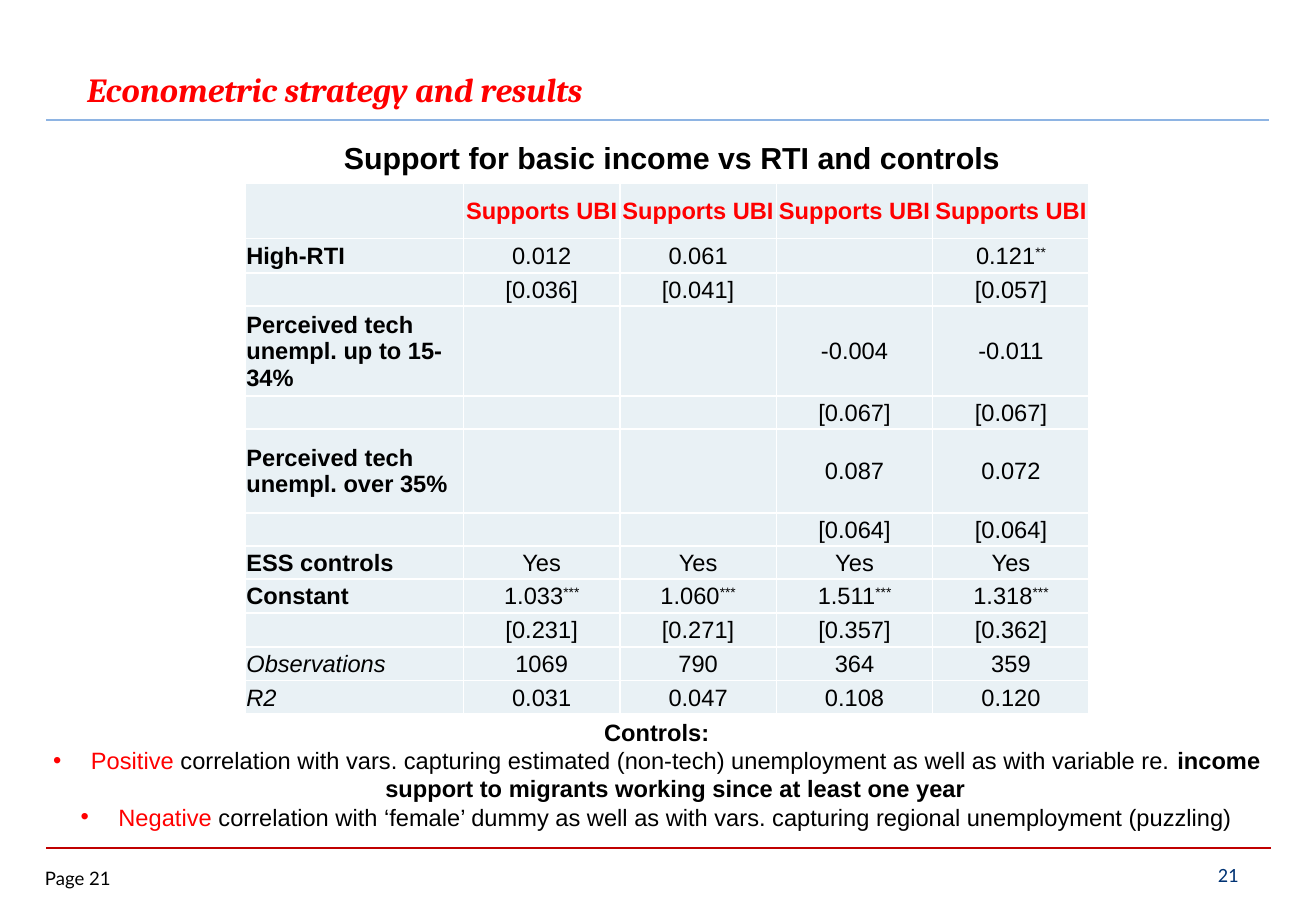
import pptx
import pptx.util
import pptx.dml.color
import pptx.enum.shapes
import pptx.enum.text
import pptx.oxml
import pptx.oxml.ns
from lxml import etree

Cm, Pt = pptx.util.Cm, pptx.util.Pt
ALIGN = pptx.enum.text.PP_ALIGN
MIDDLE = pptx.enum.text.MSO_ANCHOR.MIDDLE
qn = pptx.oxml.ns.qn

# Content
BLACK, RED, WHITE, CELL = "000000", "FF0000", "FFFFFF", "E9F1F5"
BODY = dict(name="Arial", size=14, color=BLACK)
BOLD = dict(BODY, bold=True)
REDDISH = dict(BODY, color=RED)
TITLE = dict(name="Cambria", size=20, color=RED, bold=True, italic=True)

# start x, end x, y, colour, width
RULES = [(0.97, 26.57, 17.73, "C00000", 1), (0.97, 26.52, 2.51, "8EB4E3", 1.5)]

# left, top, width, height, inset, alignment, text, format
LABELS = [
    (0.94, 18.14, 1.85, 0.56, False, ALIGN.LEFT, "Page 21",
     dict(name="Lato", size=11, color=BLACK)),
    (1.57, 1.32, 19.58, 1.12, True, ALIGN.LEFT, "Econometric strategy and results", TITLE),
    (19.71, 17.91, 6.43, 1.02, True, ALIGN.RIGHT, "21",
     dict(name="Calibri", size=12, color="003374")),
    (1.96, 2.79, 24.18, 1.02, True, ALIGN.CENTER,
     "Support for basic income vs RTI and controls", dict(BOLD, size=18)),
]

NOTES = [
    [("Controls:", BOLD)],
    [("Positive", REDDISH),
     (" correlation with vars. capturing estimated (non-tech) unemployment"
      " as well as with variable re.", BODY),
     (" income support to migrants working since at least one year", BOLD)],
    [("Negative", REDDISH),
     (" correlation with ‘female’ dummy as well as with vars."
      " capturing regional unemployment (puzzling)", BODY)],
]

# row height, cells
RESULTS = [
    (1.15, ["", "Supports UBI", "Supports UBI", "Supports UBI", "Supports UBI"]),
    (0.72, ["High-RTI", "0.012", "0.061", "", "0.121**"]),
    (0.69, ["", "[0.036]", "[0.041]", "", "[0.057]"]),
    (1.88, ["Perceived tech unempl. up to 15-34%", "", "", "-0.004", "-0.011"]),
    (0.69, ["", "", "", "[0.067]", "[0.067]"]),
    (1.76, ["Perceived tech unempl. over 35%", "", "", "0.087", "0.072"]),
    (0.69, ["", "", "", "[0.064]", "[0.064]"]),
    (0.69, ["ESS controls", "Yes", "Yes", "Yes", "Yes"]),
    (0.71, ["Constant", "1.033***", "1.060***", "1.511***", "1.318***"]),
    (0.71, ["", "[0.231]", "[0.271]", "[0.357]", "[0.362]"]),
    (0.71, ["Observations", "1069", "790", "364", "359"]),
    (0.70, ["R2", "0.031", "0.047", "0.108", "0.120"]),
]
COLUMNS = [4.56] + [3.27] * 4
ITALIC_ROWS = ("Observations", "R2")


# Helpers
def rgb(value):
    return pptx.dml.color.RGBColor.from_string(value)


def add_run(p, text, fmt):
    r = p.add_run()
    r.text = text
    for key, value in fmt.items():
        if key == "color":
            r.font.color.rgb = rgb(value)
        else:
            setattr(r.font, key, Pt(value) if key == "size" else value)
    return r


def add_box(s, left, top, width, height, inset=True):
    tf = s.shapes.add_textbox(Cm(left), Cm(top), Cm(width), Cm(height)).text_frame
    tf.word_wrap = True
    if not inset:
        tf.margin_left = tf.margin_right = tf.margin_top = tf.margin_bottom = 0
    return tf


def add_bullet(p, color):
    pPr = p._p.get_or_add_pPr()
    pPr.set("marL", str(Cm(0.79)))
    pPr.set("indent", str(-Cm(0.79)))
    clr = etree.SubElement(pPr, qn("a:buClr"))
    etree.SubElement(clr, qn("a:srgbClr"), val=color)
    etree.SubElement(pPr, qn("a:buFont"), typeface="Arial")
    etree.SubElement(pPr, qn("a:buChar"), char="•")


def style_cell(cell):
    cell.vertical_anchor = MIDDLE
    cell.margin_left = cell.margin_right = cell.margin_top = Cm(0.02)
    cell.margin_bottom = 0
    tcPr = cell._tc.get_or_add_tcPr()
    for side in ("a:lnL", "a:lnR", "a:lnT", "a:lnB"):
        ln = etree.SubElement(tcPr, qn(side), w=str(Pt(1)))
        fill = etree.SubElement(ln, qn("a:solidFill"))
        etree.SubElement(fill, qn("a:srgbClr"), val=WHITE)
    cell.fill.solid()
    cell.fill.fore_color.rgb = rgb(CELL)


def cell_format(row, col, text):
    if row == 0:
        return dict(BOLD, color=RED)
    if col == 0:
        return dict(BODY, italic=True) if text in ITALIC_ROWS else BOLD
    return BODY


def fill_cell(cell, row, col, text):
    style_cell(cell)
    p = cell.text_frame.paragraphs[0]
    p.alignment = ALIGN.CENTER if col else ALIGN.LEFT
    if not text:
        # Keeps empty cells from stretching their row
        etree.SubElement(p._p, qn("a:endParaRPr"), sz="1400")
        return
    fmt = cell_format(row, col, text)
    number = text.rstrip("*")
    add_run(p, number, fmt)
    stars = text[len(number):]
    if stars:
        r = add_run(p, stars, fmt)
        r.font._element.set("baseline", "30000")


def main():
    prs = pptx.Presentation()
    prs.slide_width, prs.slide_height = Cm(27.51), Cm(19.05)
    s = prs.slides.add_slide(prs.slide_layouts[6])

    # Rules
    for x1, x2, y, color, width in RULES:
        line = s.shapes.add_connector(
            pptx.enum.shapes.MSO_CONNECTOR.STRAIGHT, Cm(x1), Cm(y), Cm(x2), Cm(y))
        line.line.color.rgb = rgb(color)
        line.line.width = Pt(width)
        etree.SubElement(line._element.spPr, qn("a:effectLst"))

    # Title, caption and page numbers
    for left, top, width, height, inset, align, text, fmt in LABELS:
        p = add_box(s, left, top, width, height, inset).paragraphs[0]
        p.alignment = align
        add_run(p, text, fmt)

    # Notes under the table
    tf = add_box(s, 0.33, 14.88, 26.8, 2.64)
    for i, runs in enumerate(NOTES):
        p = tf.add_paragraph() if i else tf.paragraphs[0]
        p.alignment = ALIGN.CENTER
        if i:
            add_bullet(p, RED)
        for text, fmt in runs:
            add_run(p, text, fmt)

    # Regression table
    heights = [height for height, _ in RESULTS]
    table = s.shapes.add_table(
        len(RESULTS), len(COLUMNS), Cm(5.13), Cm(3.84),
        Cm(sum(COLUMNS)), Cm(sum(heights))).table
    table.first_row = table.horz_banding = False
    for column, width in zip(table.columns, COLUMNS):
        column.width = Cm(width)
    for row, (height, texts) in enumerate(RESULTS):
        table.rows[row].height = Cm(height)
        for col, text in enumerate(texts):
            fill_cell(table.cell(row, col), row, col, text)

    prs.save("out.pptx")


if __name__ == "__main__":
    main()
